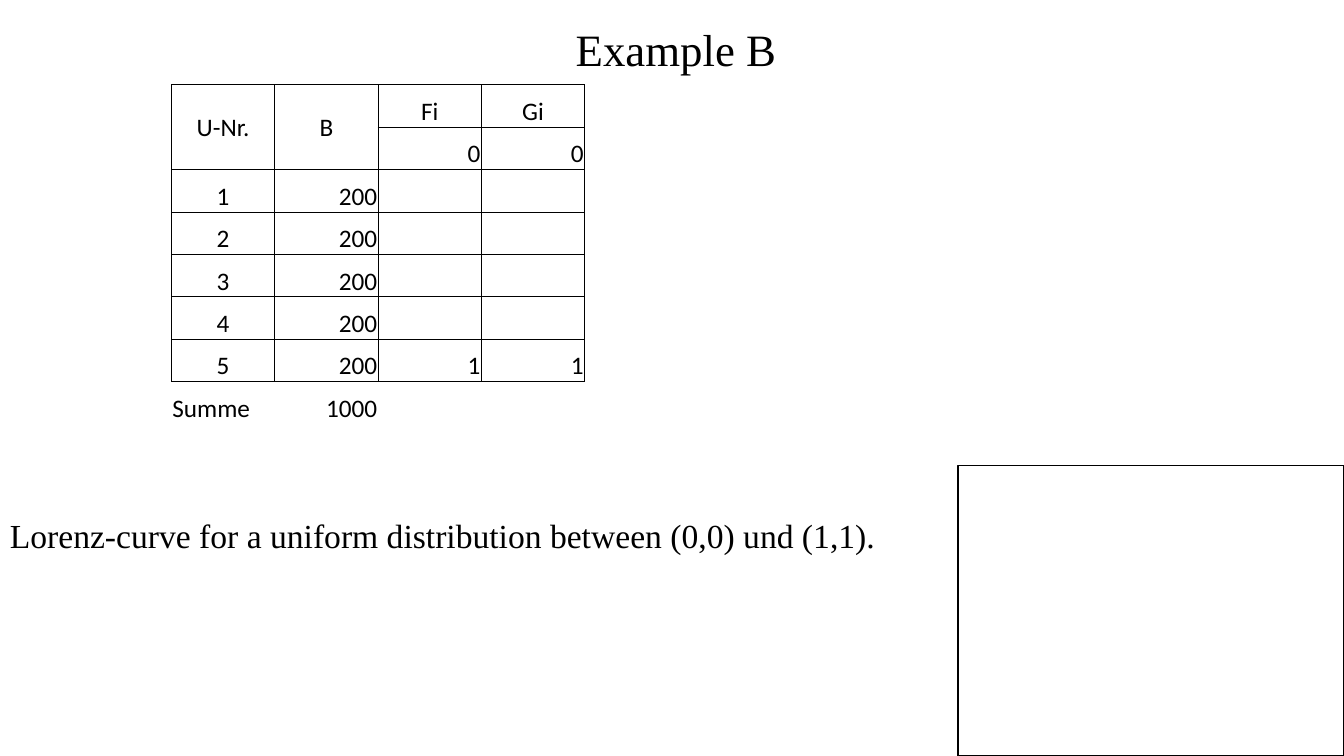
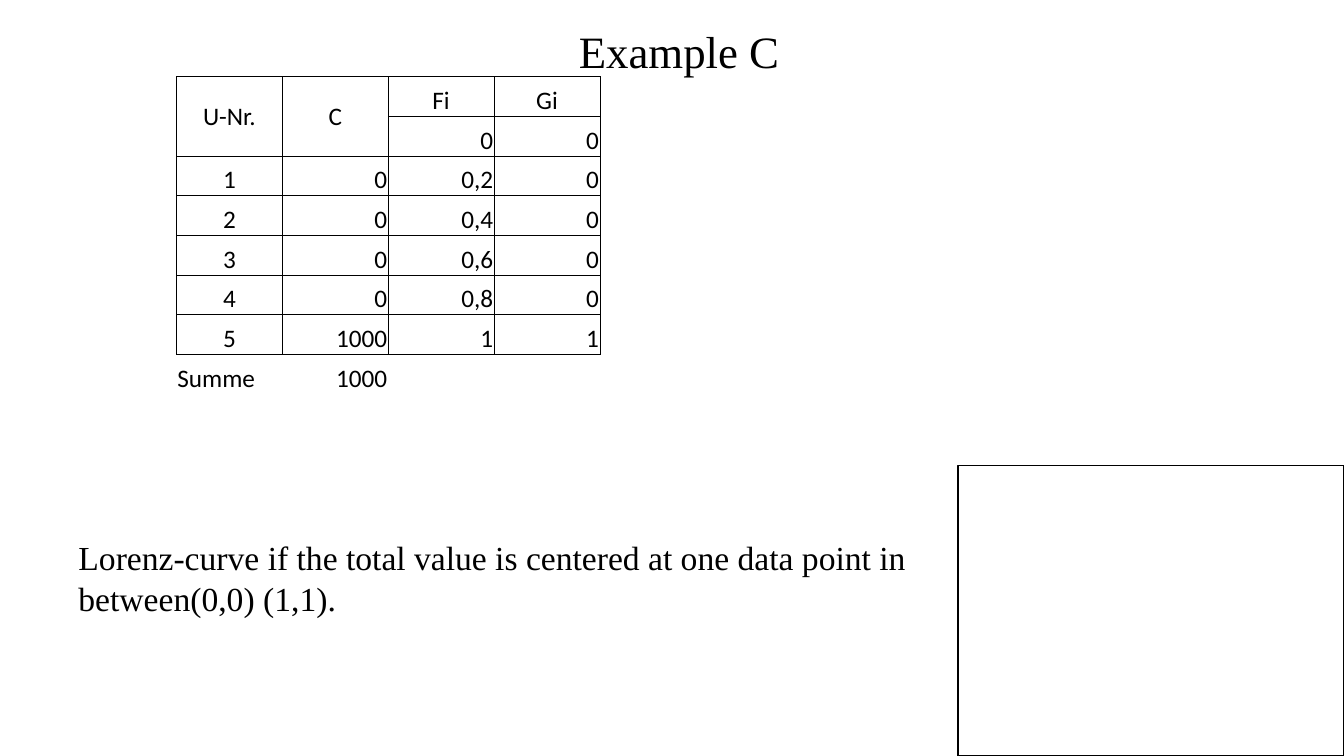
from lxml.etree import SubElement
from pptx import Presentation
from pptx.dml.color import RGBColor
from pptx.enum.shapes import MSO_SHAPE
from pptx.enum.text import MSO_ANCHOR, PP_ALIGN
from pptx.oxml.ns import qn
from pptx.util import Inches, Pt


def color(code):
    return RGBColor.from_string(code)


class Deck:
    ink = "000000"
    serif = "Times New Roman"
    sans = "Calibri"

    def __init__(self):
        self.prs = Presentation()
        self.prs.slide_width = Inches(13.33)
        self.prs.slide_height = Inches(7.5)

    def start(self):
        self.slide = self.prs.slides.add_slide(self.prs.slide_layouts[6])

    def style(self, para, size, face, align):
        para.alignment = align
        for run in para.runs:
            run.font.size = Pt(size)
            run.font.name = face
            run.font.color.rgb = color(self.ink)

    def text(self, words, box, size, align=PP_ALIGN.LEFT, anchor=MSO_ANCHOR.TOP):
        frame = self.slide.shapes.add_textbox(*map(Inches, box)).text_frame
        frame.word_wrap = True
        frame.vertical_anchor = anchor
        frame.text = words
        self.style(frame.paragraphs[0], size, self.serif, align)

    def title(self, words, left, top):
        self.text(words, (left, top, 9.69, 0.71), 32, PP_ALIGN.CENTER, MSO_ANCHOR.MIDDLE)

    def frame(self):
        shape = self.slide.shapes.add_shape(
            MSO_SHAPE.RECTANGLE, *map(Inches, (9.5, 4.62, 3.83, 2.88)))
        shape.shadow.inherit = False
        shape.fill.background()
        shape.line.color.rgb = color(self.ink)
        shape.line.width = Pt(1)

    def border(self, cell, sides):
        props = cell._tc.get_or_add_tcPr()
        for side in "LRTB":
            line = SubElement(props, qn("a:ln" + side), w=str(Pt(0.5)))
            if side in sides:
                fill = SubElement(line, qn("a:solidFill"))
                SubElement(fill, qn("a:srgbClr"), val=self.ink)
            else:
                SubElement(line, qn("a:noFill"))

    def cell(self, cell, words, align, anchor, sides):
        self.border(cell, sides)
        cell.fill.background()
        cell.margin_left = cell.margin_right = cell.margin_top = Inches(0.01)
        cell.margin_bottom = 0
        cell.vertical_anchor = anchor
        cell.text = words
        self.style(cell.text_frame.paragraphs[0], 18, self.sans, align)

    def table(self, rows, box):
        count, width = len(rows), len(rows[0])
        table = self.slide.shapes.add_table(count, width, *map(Inches, box)).table
        table.first_row = table.horz_banding = False
        for col in table.columns:
            col.width = Inches(box[2] / width)
        for row in table.rows:
            row.height = Inches(box[3] / count)
        for i, row in enumerate(rows):
            last = i == count - 1
            for j, words in enumerate(row):
                align = PP_ALIGN.RIGHT
                if last and j == 0:
                    align = PP_ALIGN.LEFT
                elif i == 0 or j == 0:
                    align = PP_ALIGN.CENTER
                anchor = MSO_ANCHOR.MIDDLE if i == 0 and j < 2 else MSO_ANCHOR.BOTTOM
                self.cell(table.cell(i, j), words, align, anchor, "T" if last else "LRTB")
        for j in range(2):
            table.cell(0, j).merge(table.cell(1, j))


def grid(name, values, shares, sums):
    rows = [["U-Nr.", name, "Fi", "Gi"], ["", "", "0", "0"]]
    for i, row in enumerate(zip(values, shares, sums), 1):
        rows.append([str(i), *row])
    return rows + [["Summe", "1000", "", ""]]


def main():
    deck = Deck()

    deck.start()
    deck.title("Example B", 1.86, 0.13)
    ends = [""] * 4 + ["1"]
    deck.table(grid("B", ["200"] * 5, ends, ends), (1.7, 0.84, 4.1, 3.37))
    deck.text("Lorenz-curve for a uniform distribution between (0,0) und (1,1).",
              (0, 5.06, 10, 1), 24)
    deck.frame()

    deck.start()
    deck.title("Example C", 1.89, 0.15)
    zeros = ["0"] * 4
    deck.table(grid("C", zeros + ["1000"], ["0,2", "0,4", "0,6", "0,8", "1"], zeros + ["1"]),
               (1.75, 0.76, 4.2, 3.15))
    deck.text("Lorenz-curve if the total value is centered at one data point in "
              "between(0,0) (1,1).", (0.68, 5.28, 10, 1), 24)
    deck.frame()

    deck.prs.save("out.pptx")


if __name__ == "__main__":
    main()
